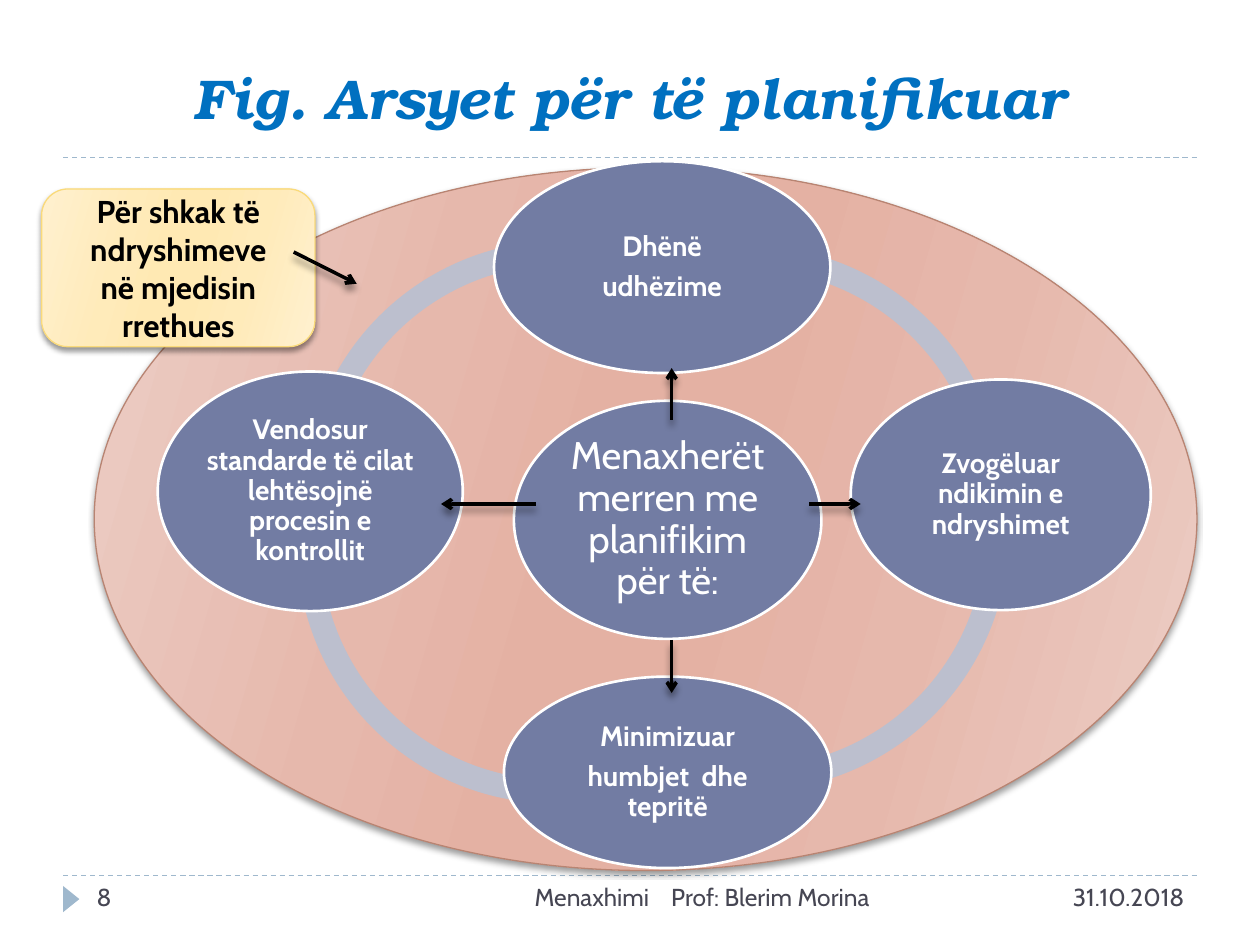
from lxml.etree import SubElement
from pptx import Presentation
from pptx.dml.color import RGBColor
from pptx.enum.dml import MSO_LINE
from pptx.enum.shapes import MSO_CONNECTOR, MSO_SHAPE
from pptx.enum.text import MSO_ANCHOR, PP_ALIGN
from pptx.oxml.ns import qn
from pptx.util import Cm, Pt

COLORS = {
    "title": "0070C0", "text": "464653", "black": "000000", "white": "FFFFFF",
    "accent": "9FB8CD", "node": "727CA3", "ring": "BCBFCE",
    "oval_line": "B88472", "callout_line": "FADA7A",
}
# Edge, inner and middle tone of each mirrored gradient
OVAL_TONES = ("ECCEC6", "E6B8AC", "E4B1A3")
CALLOUT_TONES = ("FFF0CF", "FFEBBA", "FFE9B3")
BODY, DISPLAY = "Cabin", "TeX Gyre Bonum"

# All positions below are in centimetres
LEFT, RIGHT = 1.27, 24.13
RULES = [17.65, 3.18]
TITLE = ("Fig. Arsyet për të planifikuar", (1.27, 0.43, 22.86, 2.34))
FOOTERS = [  # text, left, width, alignment
    ("31.10.2018", 17.78, 6.35, PP_ALIGN.RIGHT),
    ("Menaxhimi    Prof: Blerim Morina", 8.05, 9.73, PP_ALIGN.RIGHT),
    ("8", 1.7, 5.51, PP_ALIGN.LEFT),
]
OVAL = (1.9, 3.38, 22.23, 14.17)
RING_SIZE, RING_WIDTH = 10.41, 0.046
RING_ARCS = [  # left, top, start, end
    (6.12, 4.85, 109.13, 175.93),
    (5.99, 5.79, 38.26, 115.44),
    (9.93, 5.54, 210.61, 65.48),
    (9.86, 4.95, 150.03, 214.52),
]
NODES = [  # text, box, size, bold, inset
    ("Menaxherët merren me planifikim për të:",
     (10.36, 8.08, 6.2, 4.8), 22, False, 0.08),
    ("Dhënë\nudhëzime", (9.96, 3.25, 6.78, 4.27), 16, True, 0.05),
    ("Zvogëluar ndikimin e ndryshimet",
     (17.15, 7.65, 6.05, 4.65), 16, True, 0.05),
    ("Minimizuar\nhumbjet  dhe tepritë",
     (10.16, 13.64, 6.6, 3.86), 16, True, 0.05),
    ("Vendosur standarde të cilat lehtësojnë procesin e kontrollit",
     (3.18, 7.49, 6.15, 4.83), 16, True, 0.05),
]
CALLOUT = ("Për shkak të ndryshimeve\nnë mjedisin rrethues",
           (0.84, 3.81, 5.51, 3.18))
ARROWS = [
    (5.92, 5.08, 7.19, 5.72),
    (13.54, 8.46, 13.54, 7.42),
    (16.31, 10.16, 17.35, 10.16),
    (10.8, 10.16, 8.89, 10.16),
    (13.54, 12.9, 13.54, 13.97),
]


def rgb(name):
    return RGBColor.from_string(COLORS[name])


def cm(values):
    return [Cm(v) for v in values]


def add_shape(s, kind, box, fill=None, line=None, width=0.75):
    sp = s.shapes.add_shape(kind, *cm(box))
    sp.shadow.inherit = False
    if fill:
        sp.fill.solid()
        sp.fill.fore_color.rgb = rgb(fill)
    if line:
        sp.line.color.rgb = rgb(line)
        sp.line.width = Pt(width)
    else:
        sp.line.fill.background()
    return sp


def set_gradient(sp, tones):
    edge, inner, middle = tones
    sp.fill.gradient()
    sp.fill.gradient_angle = 360 - 16
    stops = sp._element.spPr.find(".//" + qn("a:gsLst"))
    for stop in list(stops):
        stops.remove(stop)
    for pos, tone in ((0, edge), (30, inner), (45, middle),
                      (55, middle), (73, inner), (100, edge)):
        gs = SubElement(stops, qn("a:gs"), pos=str(pos * 1000))
        SubElement(gs, qn("a:srgbClr"), val=tone)


def set_shadow(effects, blur, dist):
    """Fill an a:effectLst with a soft shadow straight below."""
    shadow = SubElement(effects, qn("a:outerShdw"), blurRad=str(Pt(blur)),
                        dist=str(Pt(dist)), dir="5400000", rotWithShape="0")
    clr = SubElement(shadow, qn("a:srgbClr"), val=COLORS["black"])
    SubElement(clr, qn("a:alpha"), val="40000")


def add_line(s, ends, color, width):
    """Return the connector and its empty effect list."""
    ln = s.shapes.add_connector(MSO_CONNECTOR.STRAIGHT, *cm(ends))
    ln.line.color.rgb = rgb(color)
    ln.line.width = Pt(width)
    return ln, SubElement(ln._element.spPr, qn("a:effectLst"))


def set_text(sp, text, size, color, align=PP_ALIGN.CENTER, font=BODY,
             bold=False, italic=False, anchor=MSO_ANCHOR.MIDDLE):
    tf = sp.text_frame
    tf.text = text
    tf.word_wrap = True
    tf.vertical_anchor = anchor
    for p in tf.paragraphs:
        p.alignment = align
        for r in p.runs:
            r.font.name, r.font.size = font, Pt(size)
            r.font.bold, r.font.italic = bold, italic
            r.font.color.rgb = rgb(color)
    return tf


def add_frame(s):
    """Title, rules and footer."""
    for y in RULES:
        ln, _ = add_line(s, (LEFT, y, RIGHT, y), "accent", 0.75)
        ln.line.dash_style = MSO_LINE.DASH
    marker = add_shape(s, MSO_SHAPE.ISOSCELES_TRIANGLE,
                       (1.17, 17.96, 0.53, 0.33), "accent")
    marker.rotation = 90
    text, box = TITLE
    set_text(s.shapes.add_textbox(*cm(box)), text, 32, "title", font=DISPLAY,
             bold=True, italic=True, anchor=MSO_ANCHOR.BOTTOM)
    for text, x, w, align in FOOTERS:
        box = s.shapes.add_textbox(*cm((x, RULES[0], w, 1.02)))
        set_text(box, text, 14, "text", align, anchor=MSO_ANCHOR.TOP)


def add_panel(s, kind, box, tones, line):
    """Gradient shape with a shadow."""
    sp = add_shape(s, kind, box, line=line)
    set_gradient(sp, tones)
    set_shadow(sp._element.spPr.find(qn("a:effectLst")), 3, 2)
    return sp


def add_diagram(s):
    add_panel(s, MSO_SHAPE.OVAL, OVAL, OVAL_TONES, "oval_line")
    for x, y, start, end in RING_ARCS:
        arc = add_shape(s, MSO_SHAPE.BLOCK_ARC,
                        (x, y, RING_SIZE, RING_SIZE), "ring")
        for i, value in enumerate((start, end, RING_WIDTH)):
            arc.adjustments[i] = value
    for text, box, size, bold, inset in NODES:
        sp = add_shape(s, MSO_SHAPE.OVAL, box, "node", "white", 1.5)
        tf = set_text(sp, text, size, "white", bold=bold)
        tf.margin_left = tf.margin_right = Cm(inset)
        tf.margin_top = tf.margin_bottom = Cm(inset)
        for p in tf.paragraphs:
            p.line_spacing = 0.9
            p.space_after = Pt(0.35 * size)
    text, box = CALLOUT
    sp = add_panel(s, MSO_SHAPE.ROUNDED_RECTANGLE, box, CALLOUT_TONES,
                   "callout_line")
    set_text(sp, text, 18, "black", bold=True)
    for ends in ARROWS:
        ln, effects = add_line(s, ends, "black", 2)
        SubElement(ln.line._get_or_add_ln(), qn("a:tailEnd"), type="arrow")
        set_shadow(effects, 4, 3.4)


def main():
    prs = Presentation()
    prs.slide_width, prs.slide_height = Cm(25.4), Cm(19.05)
    s = prs.slides.add_slide(prs.slide_layouts[6])
    add_frame(s)
    add_diagram(s)
    prs.save("out.pptx")


if __name__ == "__main__":
    main()
